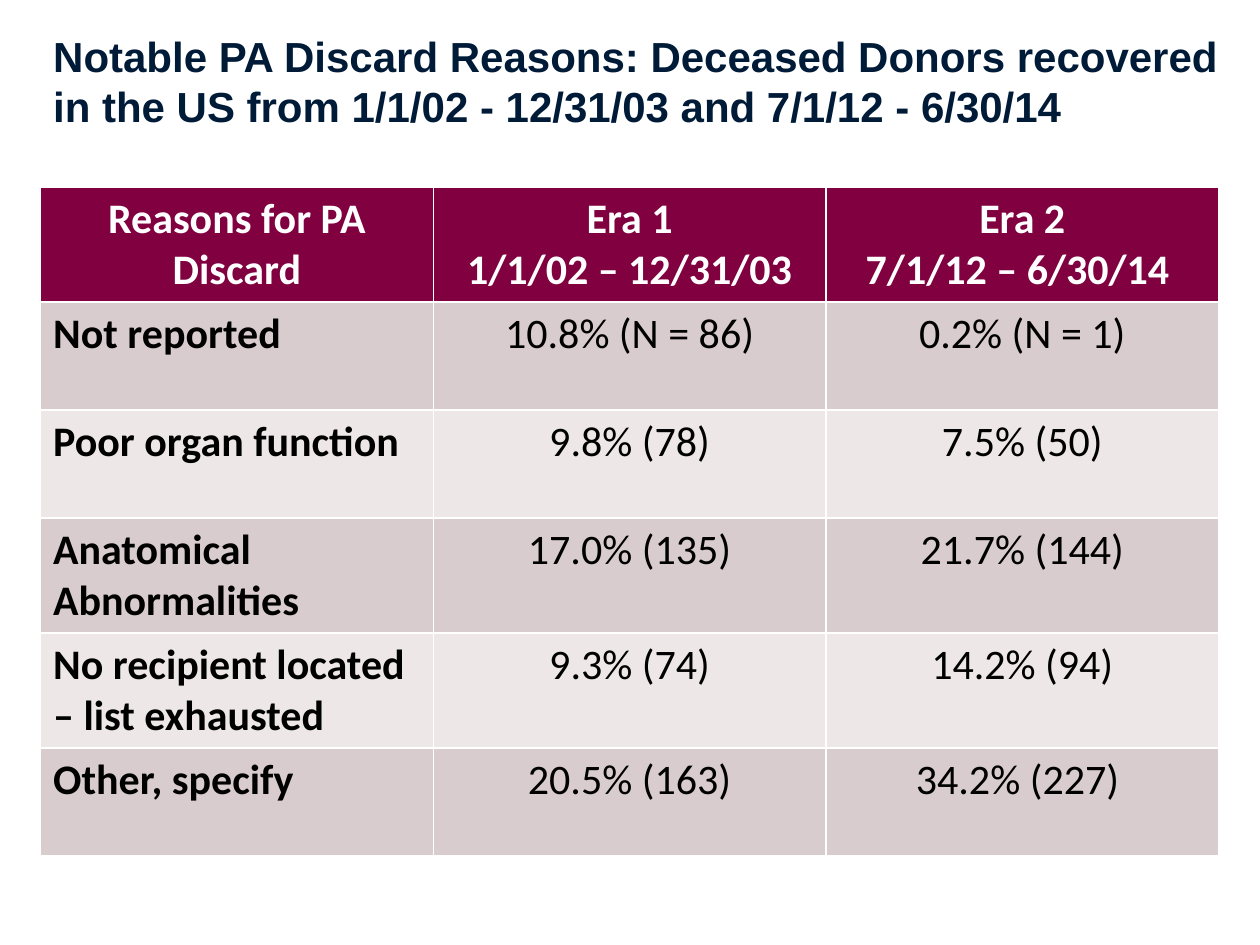
from pptx import Presentation
from pptx.dml.color import RGBColor
from pptx.enum.text import MSO_ANCHOR, PP_ALIGN
from pptx.util import Pt

# Content
TITLE = ("Notable PA Discard Reasons: Deceased Donors recovered in the US "
         "from 1/1/02 - 12/31/03 and 7/1/12 - 6/30/14")
HEADER = ("Reasons for PA Discard", "Era 1\n1/1/02 – 12/31/03", "Era 2\n7/1/12 – 6/30/14 ")
REASONS = [
    ("Not reported", "10.8% (N = 86)", "0.2% (N = 1)"),
    ("Poor organ function", "9.8% (78)", "7.5% (50)"),
    ("Anatomical Abnormalities", "17.0% (135)", "21.7% (144)"),
    ("No recipient located – list exhausted", "9.3% (74)", "14.2% (94)"),
    ("Other, specify", "20.5% (163)", "34.2% (227) "),
]

# Format
COLORS = {"title": "001B37", "header": "800040", "header_text": "FFFFFF",
          "odd": "D8CCCF", "even": "EDE7E8", "text": "000000"}
TITLE_BOX = {"left": 23.2, "top": 12.5, "width": 688, "height": 67}
TABLE_LEFT, TABLE_TOP = 23.2, 106.8
COLUMN_WIDTH, ROW_HEIGHT = 224.4, 61.7


def format_paragraph(paragraph, color, align, **font_values):
    paragraph.alignment = align
    for name, value in {"size": Pt(24), **font_values}.items():
        setattr(paragraph.font, name, value)
    paragraph.font.color.rgb = RGBColor.from_string(COLORS[color])


def main():
    deck = Presentation()
    deck.slide_width, deck.slide_height = Pt(720), Pt(540)
    slide = deck.slides.add_slide(deck.slide_layouts[5])

    # Title
    title = slide.shapes.title
    for name, value in TITLE_BOX.items():
        setattr(title, name, Pt(value))
    title.text_frame.text = TITLE
    title.text_frame.word_wrap = True
    title.text_frame.vertical_anchor = MSO_ANCHOR.MIDDLE
    format_paragraph(title.text_frame.paragraphs[0], "title", PP_ALIGN.LEFT,
                     name="Arial", bold=True)

    # Table of discard reasons
    rows = [HEADER, *REASONS]
    table = slide.shapes.add_table(
        len(rows), len(HEADER), Pt(TABLE_LEFT), Pt(TABLE_TOP),
        Pt(COLUMN_WIDTH * len(HEADER)), Pt(ROW_HEIGHT * len(rows))).table
    for column in table.columns:
        column.width = Pt(COLUMN_WIDTH)
    for r, row in enumerate(rows):
        table.rows[r].height = Pt(ROW_HEIGHT)
        is_header = r == 0
        fill = "header" if is_header else "odd" if r % 2 else "even"
        for c, wording in enumerate(row):
            cell = table.cell(r, c)
            cell.text = wording
            cell.fill.solid()
            cell.fill.fore_color.rgb = RGBColor.from_string(COLORS[fill])
            align = PP_ALIGN.CENTER if is_header or c else PP_ALIGN.LEFT
            for paragraph in cell.text_frame.paragraphs:
                format_paragraph(paragraph, "header_text" if is_header else "text",
                                 align, name="Calibri", bold=is_header or c == 0)

    deck.save("out.pptx")


if __name__ == "__main__":
    main()
